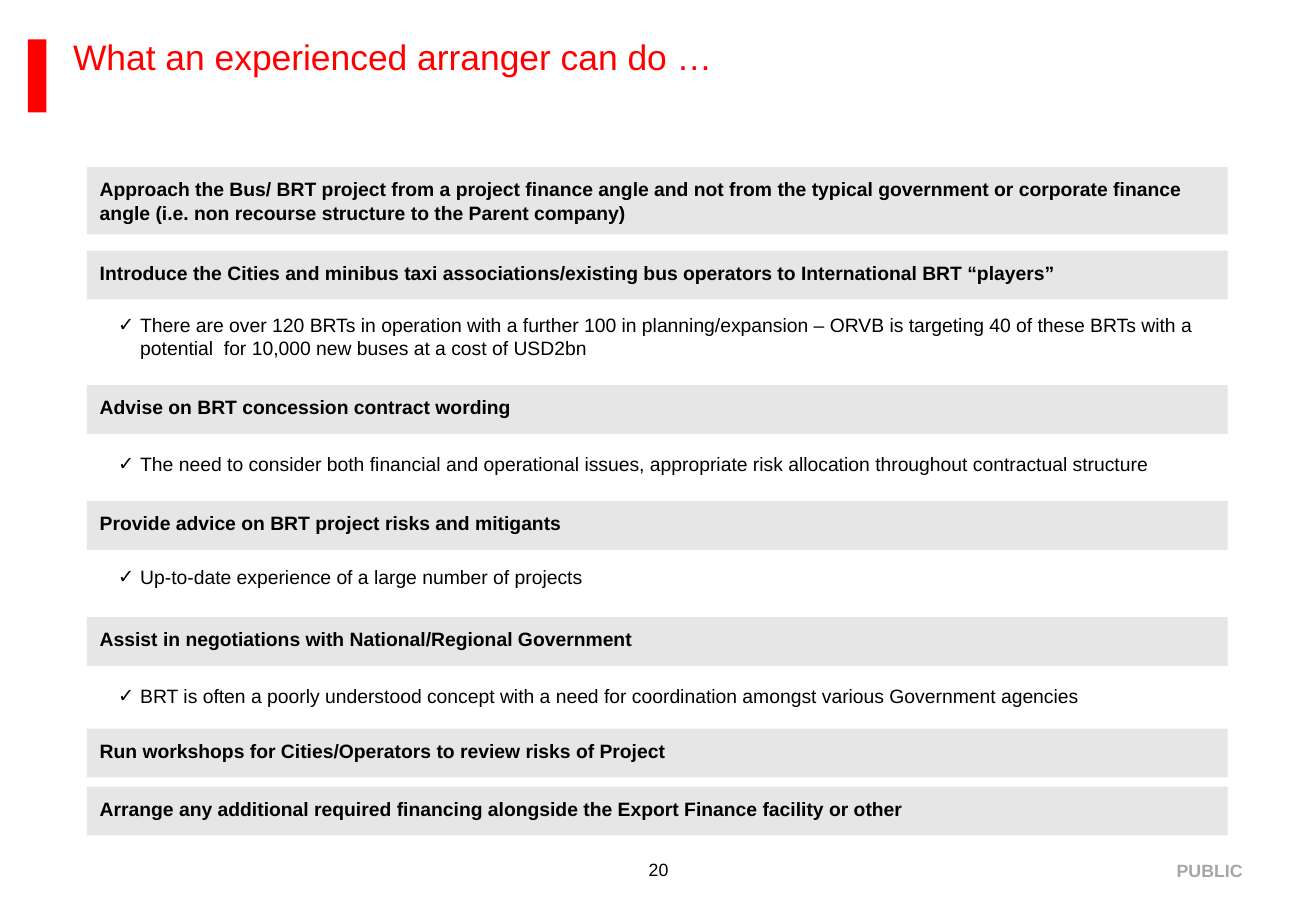
from lxml.etree import SubElement
from pptx import Presentation
from pptx.dml.color import RGBColor
from pptx.enum.shapes import MSO_SHAPE
from pptx.enum.text import MSO_ANCHOR, MSO_AUTO_SIZE, PP_ALIGN
from pptx.oxml.ns import qn
from pptx.util import Inches, Pt

TITLE = "What an experienced arranger can do …"
PAGE = "20"
MARKING = "PUBLIC"
SECTIONS = [
    (144, "Approach the Bus/ BRT project from a project finance angle and not from the typical government or "
          "corporate finance angle (i.e. non recourse structure to the Parent company)", 58, None),
    (216, "Introduce the Cities and minibus taxi associations/existing bus operators to International BRT “players”", 42,
     (7, 50, "There are over 120 BRTs in operation with a further 100 in planning/expansion – ORVB is targeting 40 of "
             "these BRTs with a potential  for 10,000 new buses at a cost of USD2bn")),
    (332, "Advise on BRT concession contract wording", 42,
     (11, 30, "The need to consider both financial and operational issues, appropriate risk allocation throughout "
              "contractual structure")),
    (432, "Provide advice on BRT project risks and mitigants", 42,
     (8, 30, "Up-to-date experience of a large number of projects")),
    (532, "Assist in negotiations with National/Regional Government", 42,
     (11, 30, "BRT is often a poorly understood concept with a need for coordination amongst various Government agencies")),
    (628, "Run workshops for Cities/Operators to review risks of Project", 42, None),
    (678, "Arrange any additional required financing alongside the Export Finance facility or other", 42, None),
]

COLORS = {"accent": "FF0000", "bar": "E6E6E6", "ink": "000000", "muted": "A6A6A6"}
CELL = Inches(0.01)
COLUMNS, ROWS = 1134, 793
BAR_LEFT, BAR_WIDTH = 75, 983
NOTE_LEFT, NOTE_WIDTH = 92, 967
NOTE_INDENT = 19
FOOTER_ROW = 740
NO_INSETS = (0, 0, 0, 0)
BAR_INSETS = (11, 9, 11, 5)
NOTE_INSETS = (10, 5, 10, 5)


def grid(*cells):
    return [CELL * cell for cell in cells]


def write(holder, wording, size, color, bold=False, insets=NO_INSETS, frame_format={}, paragraph_format={}):
    frame = holder.text_frame
    sides = ("margin_left", "margin_top", "margin_right", "margin_bottom")
    layout = {"word_wrap": True, "vertical_anchor": MSO_ANCHOR.TOP, **dict(zip(sides, grid(*insets))), **frame_format}
    for name, value in layout.items():
        setattr(frame, name, value)
    paragraph = frame.paragraphs[0]
    for name, value in {"alignment": PP_ALIGN.LEFT, **paragraph_format}.items():
        setattr(paragraph, name, value)
    run = paragraph.add_run()
    run.text = wording
    for name, value in {"name": "Arial", "size": Pt(size), "bold": bold}.items():
        setattr(run.font, name, value)
    run.font.color.rgb = RGBColor.from_string(COLORS[color])
    return paragraph


def add_block(slide, color, *cells):
    block = slide.shapes.add_shape(MSO_SHAPE.RECTANGLE, *grid(*cells))
    block.shadow.inherit = False
    block.fill.solid()
    block.fill.fore_color.rgb = RGBColor.from_string(COLORS[color])
    block.line.fill.background()
    return block


def add_note(slide, wording, top, height):
    note = slide.shapes.add_textbox(*grid(NOTE_LEFT, top, NOTE_WIDTH, height))
    paragraph = write(note, wording, 12, "ink", insets=NOTE_INSETS,
                      frame_format={"auto_size": MSO_AUTO_SIZE.SHAPE_TO_FIT_TEXT})
    properties = paragraph._p.get_or_add_pPr()
    properties.set("marL", str(CELL * NOTE_INDENT))
    properties.set("indent", str(-CELL * NOTE_INDENT))
    SubElement(properties, qn("a:buFont"), typeface="Arial")
    SubElement(properties, qn("a:buChar"), char="✓")


def main():
    deck = Presentation()
    deck.slide_width, deck.slide_height = grid(COLUMNS, ROWS)
    slide = deck.slides.add_slide(deck.slide_layouts[6])

    add_block(slide, "accent", 24, 34, 16, 63)
    title = slide.shapes.add_textbox(*grid(63, 34, 1008, 42))
    write(title, TITLE, 22, "accent", insets=(0, 0, 0, 2), paragraph_format={"line_spacing": 0.9})

    for top, heading, height, note in SECTIONS:
        bar = add_block(slide, "bar", BAR_LEFT, top, BAR_WIDTH, height)
        write(bar, heading, 12, "ink", bold=True, insets=BAR_INSETS)
        if note:
            gap, note_height, wording = note
            add_note(slide, wording, top + height + gap, note_height)

    page = slide.shapes.add_textbox(*grid(558, FOOTER_ROW, 19, 19))
    write(page, PAGE, 11, "ink", frame_format={"word_wrap": False, "vertical_anchor": MSO_ANCHOR.MIDDLE},
          paragraph_format={"alignment": PP_ALIGN.CENTER})
    marking = slide.shapes.add_textbox(*grid(821, FOOTER_ROW, 250, 20))
    write(marking, MARKING, 11, "muted", bold=True, frame_format={"vertical_anchor": MSO_ANCHOR.MIDDLE},
          paragraph_format={"alignment": PP_ALIGN.RIGHT})

    deck.save("out.pptx")


if __name__ == "__main__":
    main()
